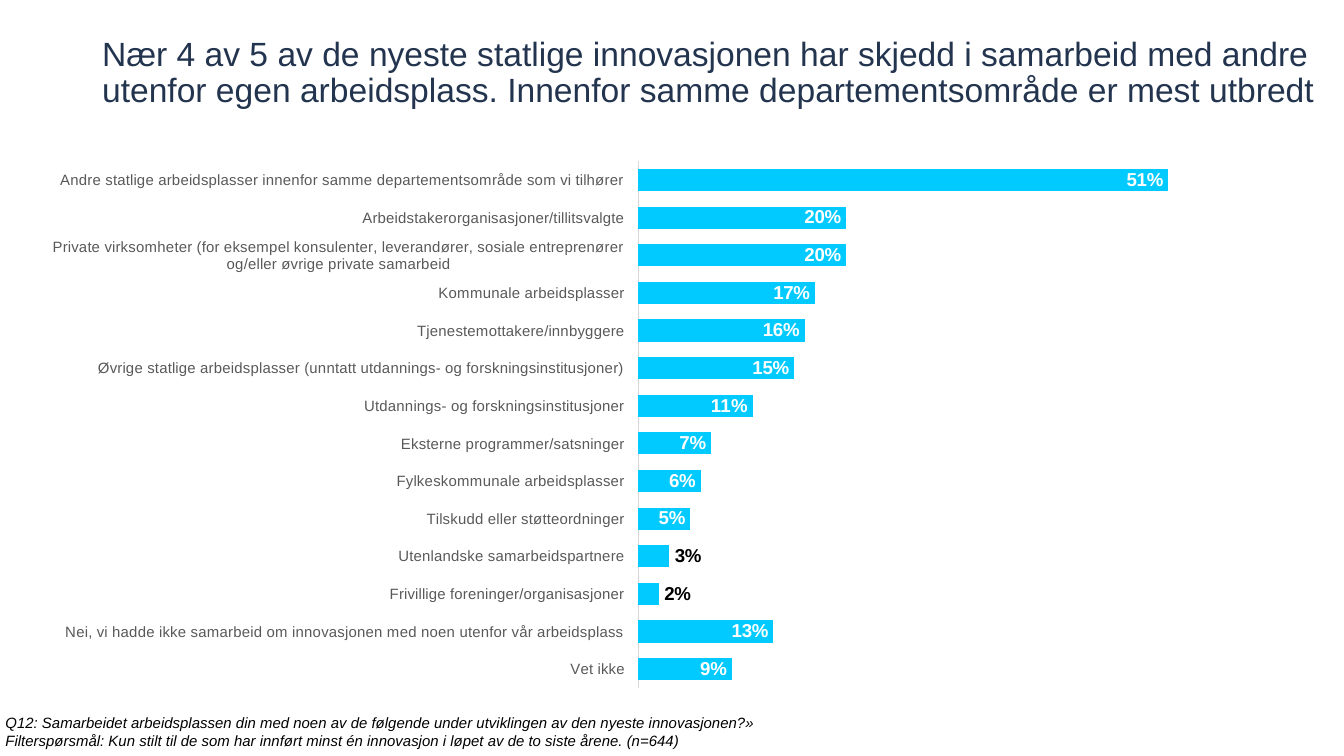
from lxml import etree
from pptx import Presentation
from pptx.chart.data import CategoryChartData
from pptx.dml.color import RGBColor
from pptx.enum.chart import XL_CHART_TYPE, XL_LABEL_POSITION, XL_TICK_LABEL_POSITION, XL_TICK_MARK
from pptx.enum.text import MSO_ANCHOR, MSO_AUTO_SIZE, PP_ALIGN
from pptx.oxml.ns import qn
from pptx.util import Inches, Pt

BAR_CLUSTERED = XL_CHART_TYPE.BAR_CLUSTERED
INSIDE_END = XL_LABEL_POSITION.INSIDE_END
OUTSIDE_END = XL_LABEL_POSITION.OUTSIDE_END
LABELS_LOW = XL_TICK_LABEL_POSITION.LOW
NO_TICK = XL_TICK_MARK.NONE
BOTTOM, TOP = MSO_ANCHOR.BOTTOM, MSO_ANCHOR.TOP
NO_FIT, GROW = MSO_AUTO_SIZE.NONE, MSO_AUTO_SIZE.SHAPE_TO_FIT_TEXT
LEFT = PP_ALIGN.LEFT

FONT = "Arial"
NAVY, BLACK, WHITE = "23344F", "000000", "FFFFFF"
GREY, LIGHT_GREY, CYAN = "595959", "D9D9D9", "00CAFF"

SLIDE_WIDTH = Inches(10)
SLIDE_HEIGHT = SLIDE_WIDTH * 9 // 16
CHART_WIDTH, CHART_HEIGHT = Inches(9.46), Inches(4.43)
# The plot area is measured from the top left corner of the chart.
PLOT_LEFT, PLOT_TOP = Inches(4.5), Inches(0.15)
PLOT_WIDTH, PLOT_HEIGHT = Inches(4.64), Inches(3.92)

TITLE = ("Nær 4 av 5 av de nyeste statlige innovasjonen har skjedd i samarbeid med andre "
         "utenfor egen arbeidsplass. Innenfor samme departementsområde er mest utbredt")
FOOTNOTES = [
    "Q12: Samarbeidet arbeidsplassen din med noen av de følgende under utviklingen av den nyeste innovasjonen?»",
    "Filterspørsmål: Kun stilt til de som har innført minst én innovasjon i løpet av de to siste årene. (n=644)",
]
# Listed from the bottom bar to the top bar.
PARTNERS = [
    ("Vet ikke", 0.09),
    ("Nei, vi hadde ikke samarbeid om innovasjonen med noen utenfor vår arbeidsplass", 0.13),
    ("Frivillige foreninger/organisasjoner", 0.02),
    ("Utenlandske samarbeidspartnere", 0.03),
    ("Tilskudd eller støtteordninger", 0.05),
    ("Fylkeskommunale arbeidsplasser", 0.06),
    ("Eksterne programmer/satsninger", 0.07),
    ("Utdannings- og forskningsinstitusjoner", 0.11),
    ("Øvrige statlige arbeidsplasser (unntatt utdannings- og forskningsinstitusjoner)", 0.15),
    ("Tjenestemottakere/innbyggere", 0.16),
    ("Kommunale arbeidsplasser", 0.17),
    ("Private virksomheter (for eksempel konsulenter, leverandører, sosiale entreprenører "
     "og/eller øvrige private samarbeid", 0.2),
    ("Arbeidstakerorganisasjoner/tillitsvalgte", 0.2),
    ("Andre statlige arbeidsplasser innenfor samme departementsområde som vi tilhører", 0.51),
]
SHORT_BAR = 0.04


def color(hex_value):
    return RGBColor.from_string(hex_value)


def set_attributes(target, values):
    for name, value in values.items():
        setattr(target, name, value)


def format_font(font, size, hex_value, **values):
    set_attributes(font, {"name": FONT, "size": Pt(size), **values})
    font.color.rgb = color(hex_value)


def fill_text(shape, lines, size, hex_value, anchor, fit, line_spacing=1.0, **font_values):
    frame = shape.text_frame
    set_attributes(frame, {
        "margin_left": 0, "margin_right": 0, "margin_top": 0, "margin_bottom": 0,
        "word_wrap": True, "vertical_anchor": anchor, "auto_size": fit,
    })
    frame.text = "\n".join(lines)
    for paragraph in frame.paragraphs:
        set_attributes(paragraph, {"alignment": LEFT, "line_spacing": line_spacing})
        format_font(paragraph.runs[0].font, size, hex_value, **font_values)


def add_title(slide):
    title = slide.shapes.title
    set_attributes(title, {"left": Inches(0.76), "top": Inches(0.49),
                           "width": Inches(9.15), "height": Inches(0.33)})
    fill_text(title, [TITLE], 18, NAVY, BOTTOM, NO_FIT, line_spacing=0.9)


def place_plot_area(chart):
    plot_area = chart.element.find(".//" + qn("c:plotArea"))
    for layout in plot_area.findall(qn("c:layout")):
        plot_area.remove(layout)
    layout = etree.Element(qn("c:layout"))
    manual = etree.SubElement(layout, qn("c:manualLayout"))
    values = {
        "layoutTarget": "inner", "xMode": "edge", "yMode": "edge",
        "x": PLOT_LEFT / CHART_WIDTH, "y": PLOT_TOP / CHART_HEIGHT,
        "w": PLOT_WIDTH / CHART_WIDTH, "h": PLOT_HEIGHT / CHART_HEIGHT,
    }
    for name, value in values.items():
        etree.SubElement(manual, qn(f"c:{name}"), val=str(value))
    plot_area.insert(0, layout)


def format_axes(chart):
    category_axis, value_axis = chart.category_axis, chart.value_axis
    set_attributes(category_axis, {"major_tick_mark": NO_TICK, "minor_tick_mark": NO_TICK,
                                   "tick_label_position": LABELS_LOW})
    format_font(category_axis.tick_labels.font, 8, GREY)
    category_axis.format.line.color.rgb = color(LIGHT_GREY)
    category_axis.format.line.width = Pt(0.75)
    set_attributes(value_axis, {"minimum_scale": 0, "maximum_scale": 0.6,
                                "has_major_gridlines": False, "visible": False})


def format_labels(series):
    """Put labels inside the bars, but dark and outside where a bar is too short."""
    labels = series.data_labels
    set_attributes(labels, {"show_value": True, "number_format": "0%",
                            "number_format_is_linked": False, "position": INSIDE_END})
    format_font(labels.font, 10, WHITE, bold=True)
    for index, (_, share) in enumerate(PARTNERS):
        if share < SHORT_BAR:
            label = series.points[index].data_label
            format_font(label.font, 10, BLACK, bold=True)
            label.position = OUTSIDE_END


def add_partner_chart(slide):
    data = CategoryChartData(number_format="0%")
    data.categories = [name for name, _ in PARTNERS]
    data.add_series("Series 1", [share for _, share in PARTNERS])
    chart = slide.shapes.add_chart(BAR_CLUSTERED, Inches(0.25), Inches(1.05),
                                   CHART_WIDTH, CHART_HEIGHT, data).chart
    set_attributes(chart, {"has_legend": False, "has_title": False})
    format_font(chart.font, 10, BLACK)
    plot = chart.plots[0]
    set_attributes(plot, {"gap_width": 70, "vary_by_categories": False})
    series = plot.series[0]
    series.format.fill.solid()
    series.format.fill.fore_color.rgb = color(CYAN)
    format_axes(chart)
    format_labels(series)
    place_plot_area(chart)


def add_footnotes(slide):
    box = slide.shapes.add_textbox(Inches(0.04), Inches(5.31), Inches(5.89), Inches(0.27))
    fill_text(box, FOOTNOTES, 8, BLACK, TOP, GROW, italic=True)


def main():
    presentation = Presentation()
    set_attributes(presentation, {"slide_width": SLIDE_WIDTH, "slide_height": SLIDE_HEIGHT})
    slide = presentation.slides.add_slide(presentation.slide_layouts[5])
    add_title(slide)
    add_partner_chart(slide)
    add_footnotes(slide)
    presentation.save("out.pptx")


if __name__ == "__main__":
    main()
